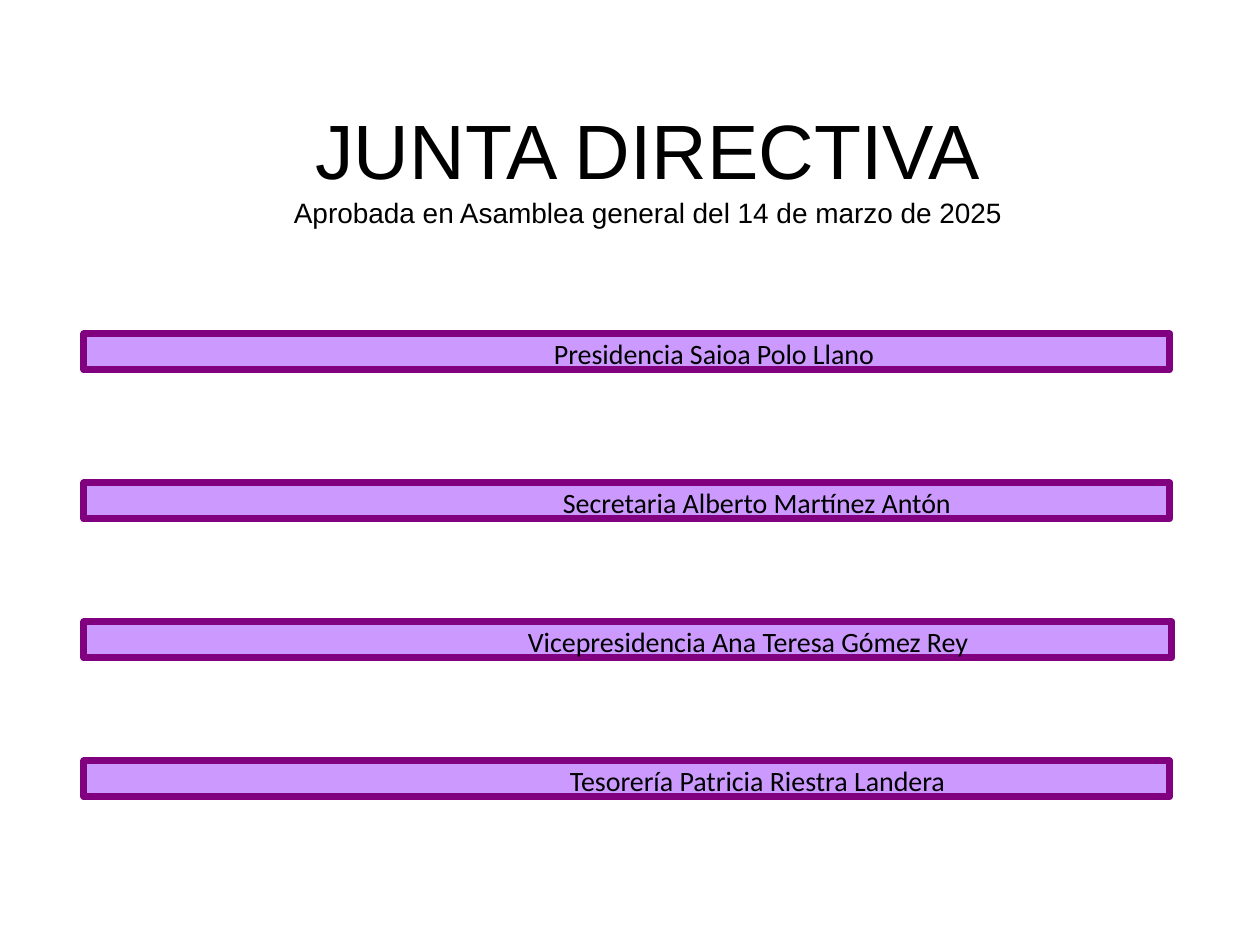
from pptx import Presentation
from pptx import util as u
from pptx.dml.color import RGBColor
from pptx.enum import shapes, text

PX = 914400 // 126
BLACK = RGBColor(0x00, 0x00, 0x00)
LILAC = RGBColor(0xCC, 0x99, 0xFF)
PURPLE = RGBColor(0x80, 0x00, 0x80)

BAR_LEFT, BAR_HEIGHT = 84, 36
BARS = [
    (334, 1086, 470, "Presidencia Saioa Polo Llano"),
    (483, 1086, 479, "Secretaria Alberto Martínez Antón"),
    (622, 1088, 444, "Vicepresidencia Ana Teresa Gómez Rey"),
    (761, 1086, 486, "Tesorería Patricia Riestra Landera"),
]


def set_values(target, values):
    for name, value in values.items():
        setattr(target, name, value)


def frame_format(top_margin):
    return {
        "margin_left": 0,
        "margin_right": 0,
        "margin_top": top_margin * PX,
        "margin_bottom": 0,
        "word_wrap": True,
        "vertical_anchor": text.MSO_ANCHOR.TOP,
    }


presentation = Presentation()
set_values(presentation, {"slide_width": 1260 * PX, "slide_height": 945 * PX})
slide = presentation.slides.add_slide(presentation.slide_layouts[5])

title = slide.shapes.title
set_values(title, {"left": 286 * PX, "top": 100 * PX, "width": 724 * PX, "height": 128 * PX})
set_values(title.text_frame, frame_format(3))
title.text_frame.auto_size = text.MSO_AUTO_SIZE.NONE
title.text_frame.text = "JUNTA DIRECTIVA\vAprobada en Asamblea general del 14 de marzo de 2025"
title_paragraph = title.text_frame.paragraphs[0]
title_paragraph.alignment = text.PP_ALIGN.CENTER
for run, size in zip(title_paragraph.runs, (44, 16)):
    set_values(run.font, {"name": "Arial", "size": u.Pt(size)})
    run.font.color.rgb = BLACK

for top, width, indent, member in BARS:
    bar = slide.shapes.add_shape(
        shapes.MSO_SHAPE.RECTANGLE, BAR_LEFT * PX, top * PX, width * PX, BAR_HEIGHT * PX
    )
    bar.shadow.inherit = False
    bar.fill.solid()
    bar.fill.fore_color.rgb = LILAC
    bar.line.color.rgb = PURPLE
    bar.line.width = u.Pt(4)
    set_values(bar.text_frame, frame_format(1))
    bar.text_frame.margin_left = indent * PX
    paragraph = bar.text_frame.paragraphs[0]
    set_values(paragraph, {"alignment": text.PP_ALIGN.LEFT, "line_spacing": u.Pt(20.1)})
    run = paragraph.add_run()
    run.text = member
    set_values(run.font, {"name": "Calibri", "size": u.Pt(16)})
    run.font.color.rgb = BLACK

presentation.save("out.pptx")
